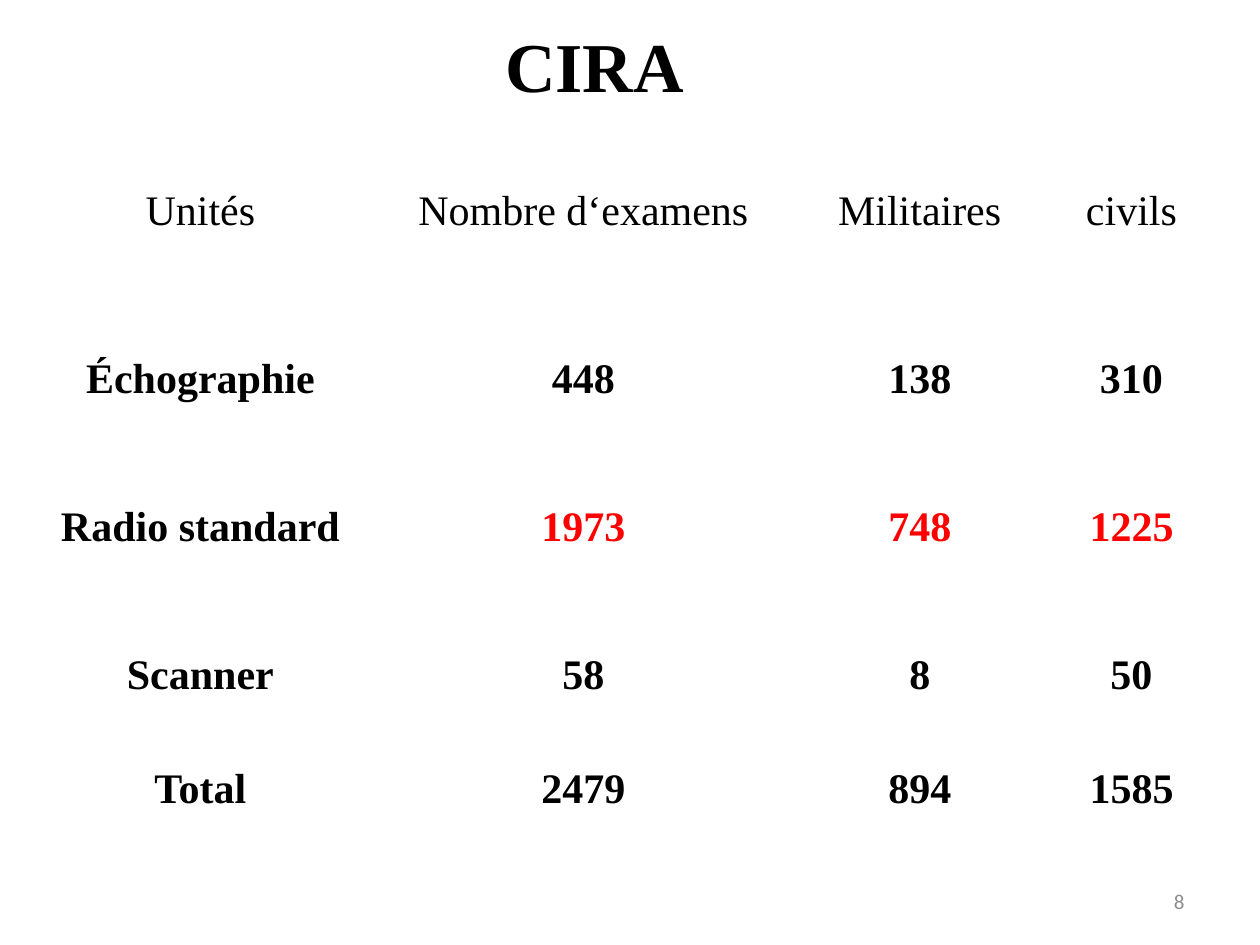
import pptx
import pptx.util
import pptx.dml.color
import pptx.enum.text

Pt = pptx.util.Pt
RGB = pptx.dml.color.RGBColor
ALIGN = pptx.enum.text.PP_ALIGN
ANCHOR = pptx.enum.text.MSO_ANCHOR

BLACK = RGB(0, 0, 0)
RED = RGB(255, 0, 0)
GREY = RGB(0x8C, 0x8C, 0x8C)
SERIF = "Times New Roman"

ROWS = [
    ("Unités", "Nombre d‘examens", "Militaires", "civils"),
    ("Échographie", "448", "138", "310"),
    ("Radio standard", "1973", "748", "1225"),
    ("Scanner", "58", "8", "50"),
    ("Total", "2479", "894", "1585"),
]
WIDTHS = [188.6, 249.1, 135.4, 106.6]
HEIGHTS = [109.4, 83.5, 85, 84.2, 46.1]
PEAK = "Radio standard"

TITLE = {"name": SERIF, "size": Pt(40), "bold": True}
HEAD = {"name": SERIF, "size": Pt(24), "bold": False}
BODY = {**HEAD, "bold": True}
PAGE = {"name": "Calibri", "size": Pt(12), "bold": False}
CELL = {
    "vertical_anchor": ANCHOR.MIDDLE,
    "margin_left": Pt(0.7),
    "margin_right": Pt(0.7),
    "margin_top": Pt(0.7),
    "margin_bottom": Pt(0),
}


def apply(obj, form):
    for key, val in form.items():
        setattr(obj, key, val)


def write(frame, text, form, color, align):
    para = frame.paragraphs[0]
    para.alignment = align
    run = para.add_run()
    run.text = text
    apply(run.font, form)
    run.font.color.rgb = color


def add_text(slide, place, text, form, color, align, layout):
    frame = slide.shapes.add_textbox(*map(Pt, place)).text_frame
    apply(frame, layout)
    write(frame, text, form, color, align)


def add_grid(slide, left, top):
    size = (len(ROWS), len(WIDTHS))
    place = map(Pt, (left, top, sum(WIDTHS), sum(HEIGHTS)))
    table = slide.shapes.add_table(*size, *place).table
    for col, width in zip(table.columns, WIDTHS):
        col.width = Pt(width)
    for r, (row, height, texts) in enumerate(zip(table.rows, HEIGHTS, ROWS)):
        row.height = Pt(height)
        for c, (cell, text) in enumerate(zip(row.cells, texts)):
            cell.fill.background()
            apply(cell, CELL)
            color = RED if texts[0] == PEAK and c else BLACK
            write(cell.text_frame, text, BODY if r else HEAD, color, ALIGN.CENTER)


def main():
    deck = pptx.Presentation()
    apply(deck, {"slide_width": Pt(720), "slide_height": Pt(540)})
    slide = deck.slides.add_slide(deck.slide_layouts[6])
    add_grid(slide, 20.2, 65.5)
    add_text(slide, (280.8, 9.4, 118.1, 55.4), "CIRA", TITLE, BLACK,
             ALIGN.CENTER, {"word_wrap": False})
    add_text(slide, (516.2, 500.4, 167.8, 28.8), "8", PAGE, GREY,
             ALIGN.RIGHT, {"word_wrap": True, "vertical_anchor": ANCHOR.MIDDLE})
    deck.save("out.pptx")


if __name__ == "__main__":
    main()
